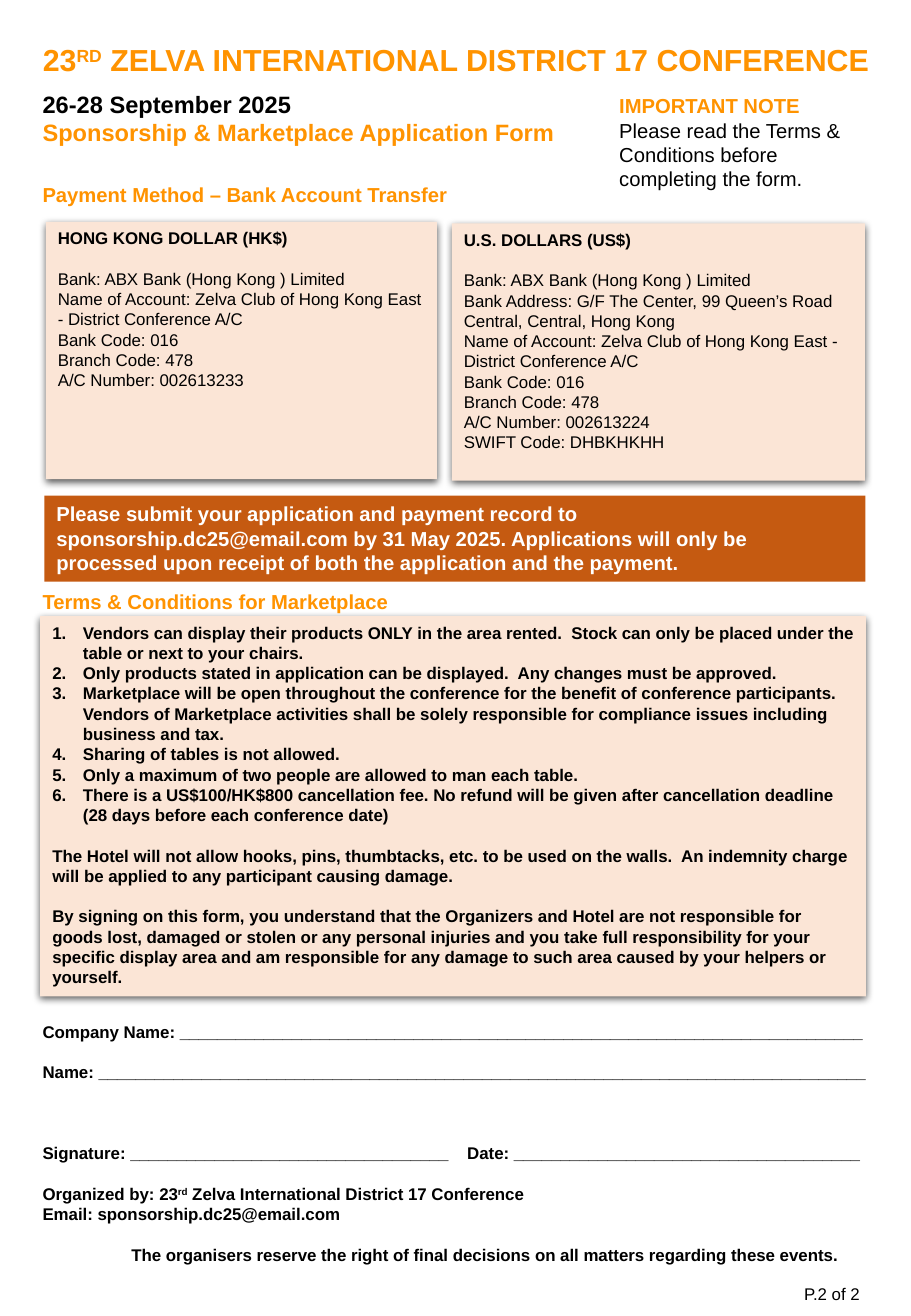
from lxml import etree
from pptx import Presentation
from pptx.dml.color import RGBColor
from pptx.enum.shapes import MSO_SHAPE
from pptx.enum.text import MSO_ANCHOR, MSO_AUTO_SIZE, PP_ALIGN
from pptx.oxml.ns import qn
from pptx.util import Cm, Pt

RECT = MSO_SHAPE.RECTANGLE
TOP, BOTTOM = MSO_ANCHOR.TOP, MSO_ANCHOR.BOTTOM
LEFT, RIGHT = PP_ALIGN.LEFT, PP_ALIGN.RIGHT
FIXED = MSO_AUTO_SIZE.NONE
INK = {"gold": "FF9300", "black": "000000", "white": "FFFFFF",
       "peach": "FBE5D6", "rust": "C55A11"}
GAP = 12  # one blank line of 10 pt text

deck = Presentation()
deck.slide_width, deck.slide_height = Cm(19.05), Cm(27.51)
slide = deck.slides.add_slide(deck.slide_layouts[1])
shapes = slide.shapes
title, terms = slide.placeholders


def write(box, size, lines, align=LEFT, anchor=TOP):
    """Fill box with (text, colour, bold, space before); ^ marks superscript."""
    frame = box.text_frame
    frame.word_wrap, frame.auto_size = True, FIXED
    frame.vertical_anchor = anchor
    for i, (text, ink, bold, gap) in enumerate(lines):
        para = frame.add_paragraph() if i else frame.paragraphs[0]
        para.alignment, para.space_before = align, Pt(gap)
        for k, part in enumerate(text.split("^")):
            run = para.add_run()
            run.text = part
            font = run.font
            font.name, font.size, font.bold = "Arial", Pt(size), bold
            font.color.rgb = RGBColor.from_string(INK[ink])
            if k % 2:
                run._r.get_or_add_rPr().set("baseline", "30000")
    return frame.paragraphs


def paint(box, ink, raised=True):
    """Give box a plain fill, no outline and, if raised, a soft shadow."""
    box.shadow.inherit = False
    box.fill.solid()
    box.fill.fore_color.rgb = RGBColor.from_string(INK[ink])
    box.line.fill.background()
    if raised:
        effects = box._element.spPr.find(qn("a:effectLst"))
        shade = etree.SubElement(effects, qn("a:outerShdw"), blurRad=str(Pt(4.5)),
                                 dist=str(Pt(1.5)), dir="5400000",
                                 algn="t", rotWithShape="0")
        black = etree.SubElement(shade, qn("a:srgbClr"), val=INK["black"])
        etree.SubElement(black, qn("a:alpha"), val="63000")


# Title
title.left, title.top = Cm(0.64), Cm(0.08)
title.width, title.height = Cm(18.21), Cm(1.68)
head = write(title, 18, [("23^RD^ ZELVA INTERNATIONAL DISTRICT 17 CONFERENCE",
                          "gold", True, 0)], anchor=BOTTOM)
head[0].line_spacing = 0.9

# Headings and note
labels = [
    (0.64, 1.75, 11.43, 1.45, 14, [
        ("26-28 September 2025", "black", True, 0),
        ("Sponsorship & Marketplace Application Form", "gold", True, 0)]),
    (12.7, 1.83, 5.44, 2.82, 12, [
        ("IMPORTANT NOTE", "gold", True, 0),
        ("Please read the Terms & Conditions before completing the form.",
         "black", False, 0)]),
    (0.64, 3.68, 12.52, 0.76, 12, [
        ("Payment Method – Bank Account Transfer", "gold", True, 0)]),
    (0.64, 12.19, 12.52, 0.76, 12, [
        ("Terms & Conditions for Marketplace", "gold", True, 0)]),
]
for x, y, w, h, size, lines in labels:
    write(shapes.add_textbox(Cm(x), Cm(y), Cm(w), Cm(h)), size, lines)

# Bank accounts
bank = "Bank: ABX Bank (Hong Kong ) Limited"
holder = "Name of Account: Zelva Club of Hong Kong East - District Conference A/C"
codes = ["Bank Code: 016", "Branch Code: 478"]
banks = [
    (0.96, 4.64, 8.18, "HONG KONG DOLLAR (HK$)",
     [bank, holder, *codes, "A/C Number: 002613233"]),
    (9.45, 4.67, 8.64, "U.S. DOLLARS (US$)",
     [bank, "Bank Address: G/F The Center, 99 Queen’s Road Central, Central, Hong Kong",
      holder, *codes, "A/C Number: 002613224", "SWIFT Code: DHBKHKHH"]),
]
for x, y, w, name, facts in banks:
    card = shapes.add_shape(RECT, Cm(x), Cm(y), Cm(w), Cm(5.38))
    paint(card, "peach")
    write(card, 10, [(name, "black", True, 0)] + [
        (fact, "black", False, 0 if i else GAP) for i, fact in enumerate(facts)])

# Deadline banner
banner = shapes.add_shape(RECT, Cm(0.93), Cm(10.36), Cm(17.17), Cm(1.8))
paint(banner, "rust", raised=False)
write(banner, 12, [(
    "Please submit your application and payment record to "
    "sponsorship.dc25@email.com by 31 May 2025. Applications will only be "
    "processed upon receipt of both the application and the payment.",
    "white", True, 0)])

# Terms
rules = [
    "Vendors can display their products ONLY in the area rented.  Stock can only "
    "be placed under the table or next to your chairs.",
    "Only products stated in application can be displayed.  Any changes must be approved.",
    "Marketplace will be open throughout the conference for the benefit of conference "
    "participants. Vendors of Marketplace activities shall be solely responsible for "
    "compliance issues including business and tax.",
    "Sharing of tables is not allowed.",
    "Only a maximum of two people are allowed to man each table.",
    "There is a US$100/HK$800 cancellation fee. No refund will be given after "
    "cancellation deadline (28 days before each conference date)",
]
notes = [
    "The Hotel will not allow hooks, pins, thumbtacks, etc. to be used on the walls.  "
    "An indemnity charge will be applied to any participant causing damage.",
    "By signing on this form, you understand that the Organizers and Hotel are not "
    "responsible for goods lost, damaged or stolen or any personal injuries and you take "
    "full responsibility for your specific display area and am responsible for any damage "
    "to such area caused by your helpers or yourself.",
]
terms.left, terms.top = Cm(0.84), Cm(12.88)
terms.width, terms.height = Cm(17.27), Cm(7.95)
paint(terms, "peach")
paras = write(terms, 10, [(rule, "black", True, 0) for rule in rules]
              + [(note, "black", True, GAP) for note in notes])
for i, para in enumerate(paras):
    props = para._p.get_or_add_pPr()
    listed = i < len(rules)
    props.set("marL", str(Cm(0.64) if listed else 0))
    props.set("indent", str(-Cm(0.64) if listed else 0))
    if listed:
        etree.SubElement(props, qn("a:buAutoNum"), type="arabicPeriod")
    else:
        etree.SubElement(props, qn("a:buNone"))

# Form fields
form = shapes.add_textbox(Cm(0.64), Cm(21.23), Cm(17.7), Cm(5.4))
fields = [
    ("Company Name: " + "_" * 73, 0),
    ("Name: " + "_" * 82, GAP),
    ("Signature: " + "_" * 34 + "\tDate: " + "_" * 37, 3 * GAP),
    ("Organized by: 23^rd^ Zelva International District 17 Conference", GAP),
    ("Email: sponsorship.dc25@email.com", 0),
    ("The organisers reserve the right of final decisions on all matters "
     "regarding these events.", GAP),
]
paras = write(form, 10, [(text, "black", True, gap) for text, gap in fields])
stops = etree.SubElement(paras[2]._p.get_or_add_pPr(), qn("a:tabLst"))
etree.SubElement(stops, qn("a:tab"), pos=str(Cm(8.88)), algn="l")
paras[-1]._p.get_or_add_pPr().set("marL", str(Cm(1.86)))

# Page number
page = shapes.add_textbox(Cm(16.05), Cm(26.7), Cm(2.18), Cm(0.69))
write(page, 10, [("P.2 of 2", "black", False, 0)], align=RIGHT)

deck.save("out.pptx")
